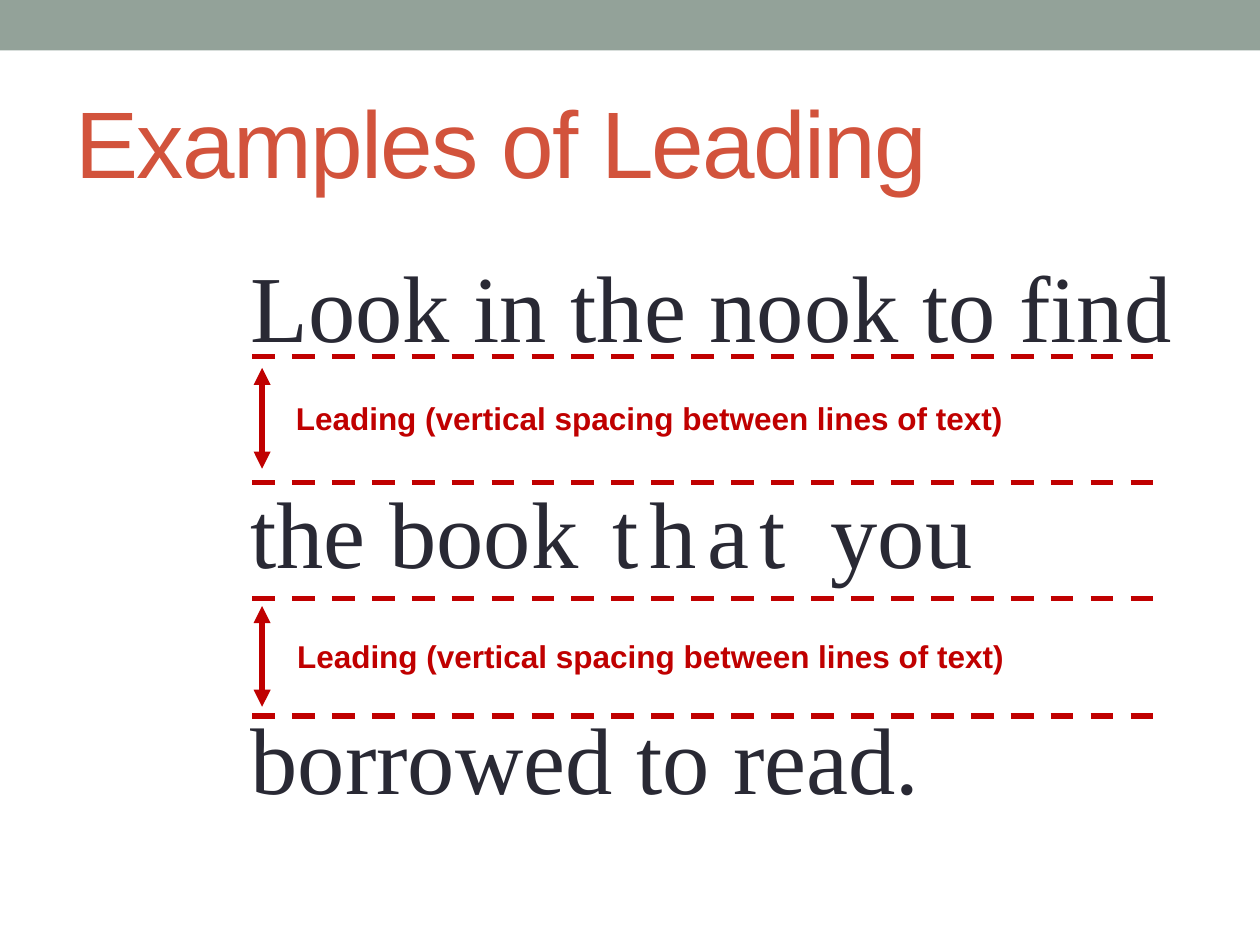
from dataclasses import dataclass

from lxml.etree import SubElement
from pptx import Presentation
from pptx.dml.color import RGBColor
from pptx.enum.dml import MSO_LINE
from pptx.enum.shapes import MSO_CONNECTOR, MSO_SHAPE
from pptx.enum.text import MSO_ANCHOR, PP_ALIGN
from pptx.oxml.ns import qn
from pptx.slide import Slide
from pptx.text.text import _Run as Run
from pptx.util import Inches, Pt

SAGE = RGBColor(0x93, 0xA2, 0x99)
RUST = RGBColor(0xD2, 0x53, 0x3C)
INK = RGBColor(0x29, 0x29, 0x34)
RED = RGBColor(0xC0, 0x00, 0x00)
WHITE = RGBColor(0xFF, 0xFF, 0xFF)

GUIDE_LEFT, GUIDE_RIGHT = 2.0, 9.25
ARROW_X, ARROW_LENGTH = 2.08, 0.8
LABEL = "Leading (vertical spacing between lines of text)"
SAMPLE_LINES = [
    [("Look in the nook to find", 0)],
    [("the book", 0), (" that ", 6), ("you", 0)],
    [("borrowed to read.", 0)],
]


@dataclass
class LeadingGap:
    upper_guide: float
    lower_guide: float
    arrow_top: float
    label_left: float
    label_top: float


GAPS = [
    LeadingGap(2.83, 3.83, 2.92, 2.25, 3.12),
    LeadingGap(4.75, 5.68, 4.81, 2.26, 5.01),
]


def format_run(run: Run, font: str, size: float, color: RGBColor,
               spacing: float = 0, bold: bool = False) -> None:
    run.font.name = font
    run.font.size = Pt(size)
    run.font.bold = bold
    run.font.color.rgb = color
    if spacing:
        run.font._element.set("spc", str(int(spacing * 100)))


def add_box(slide: Slide, left: float, top: float, width: float,
            height: float, color: RGBColor):
    box = slide.shapes.add_shape(MSO_SHAPE.RECTANGLE, Inches(left), Inches(top),
                                 Inches(width), Inches(height))
    box.shadow.inherit = False
    box.fill.solid()
    box.fill.fore_color.rgb = color
    box.line.fill.background()
    return box


def add_line(slide: Slide, x1: float, y1: float, x2: float, y2: float):
    line = slide.shapes.add_connector(MSO_CONNECTOR.STRAIGHT, Inches(x1), Inches(y1),
                                      Inches(x2), Inches(y2))
    line.line.color.rgb = RED
    line.line.width = Pt(3.25)
    SubElement(line._element.spPr, qn("a:effectLst"))
    return line


def add_guide(slide: Slide, y: float) -> None:
    guide = add_line(slide, GUIDE_LEFT, y, GUIDE_RIGHT, y)
    guide.line.dash_style = MSO_LINE.DASH


def add_double_arrow(slide: Slide, top: float) -> None:
    arrow = add_line(slide, ARROW_X, top, ARROW_X, top + ARROW_LENGTH)
    outline = arrow.line._get_or_add_ln()
    for end in ("a:headEnd", "a:tailEnd"):
        SubElement(outline, qn(end), type="triangle")


def add_label(slide: Slide, left: float, top: float) -> None:
    label = slide.shapes.add_textbox(Inches(left), Inches(top), Inches(6.03), Inches(0.4))
    label.text_frame.word_wrap = True
    label.text_frame.text = LABEL
    format_run(label.text_frame.paragraphs[0].runs[0], "Arial", 18, RED, bold=True)


def add_title(slide: Slide) -> None:
    title = slide.shapes.title
    title.left, title.top = Inches(0.5), Inches(0.58)
    title.width, title.height = Inches(9), Inches(1.08)
    title.text_frame.text = "Examples of Leading"
    title.text_frame.vertical_anchor = MSO_ANCHOR.MIDDLE
    paragraph = title.text_frame.paragraphs[0]
    paragraph.alignment = PP_ALIGN.LEFT
    format_run(paragraph.runs[0], "Arial", 54, RUST, spacing=-1)


def add_sample(slide: Slide) -> None:
    frame = add_box(slide, 1.89, 1.92, 8.08, 5, WHITE).text_frame
    frame.word_wrap = True
    frame.vertical_anchor = MSO_ANCHOR.TOP
    frame.margin_top = Inches(0.05)
    for index, pieces in enumerate(SAMPLE_LINES):
        paragraph = frame.add_paragraph() if index else frame.paragraphs[0]
        paragraph.alignment = PP_ALIGN.LEFT
        paragraph.space_before = Pt(64.3 if index else 0)
        for text, spacing in pieces:
            run = paragraph.add_run()
            run.text = text
            format_run(run, "Times New Roman", 54, INK, spacing)


def main() -> None:
    presentation = Presentation()
    presentation.slide_width, presentation.slide_height = Inches(10), Inches(7.5)
    slide = presentation.slides.add_slide(presentation.slide_layouts[5])
    add_box(slide, 0, 0, 10, 0.4, SAGE)
    add_title(slide)
    add_sample(slide)
    for gap in GAPS:
        add_guide(slide, gap.upper_guide)
        add_guide(slide, gap.lower_guide)
        add_double_arrow(slide, gap.arrow_top)
        add_label(slide, gap.label_left, gap.label_top)
    presentation.save("out.pptx")


if __name__ == "__main__":
    main()
